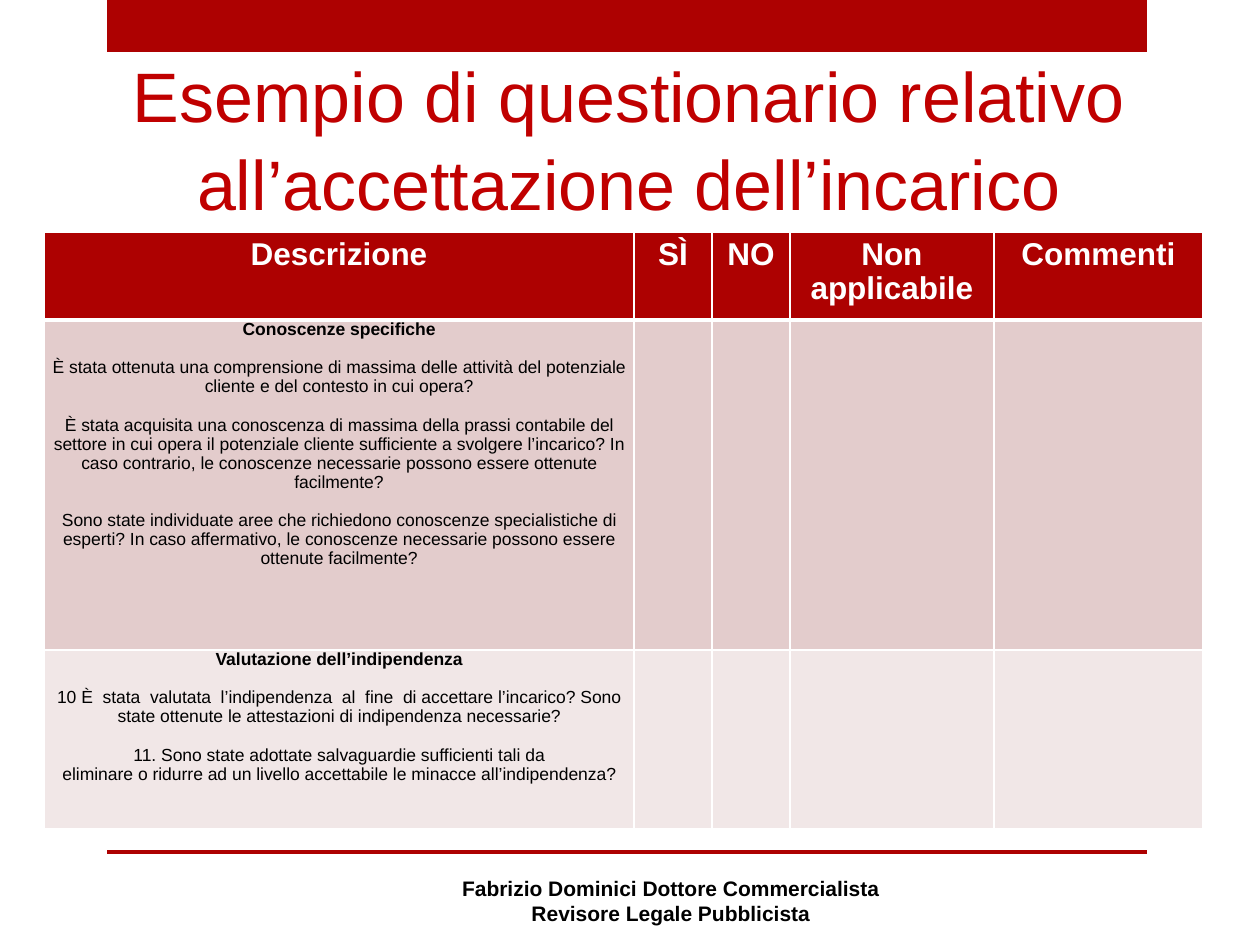
"""Build the slide with the questionnaire on accepting an engagement."""
from dataclasses import dataclass

from lxml.etree import SubElement
from pptx import Presentation
from pptx.dml.color import RGBColor
from pptx.enum.shapes import MSO_SHAPE
from pptx.enum.text import MSO_ANCHOR, PP_ALIGN
from pptx.oxml.ns import qn
from pptx.util import Pt

PX = 914400 // 126


@dataclass(frozen=True)
class Theme:
    font: str = "Arial"
    red: str = "AD0101"
    title_red: str = "C00000"
    white: str = "FFFFFF"
    black: str = "000000"
    bands: tuple = ("E3CCCC", "F1E7E7")
    title_size: int = 40
    header_size: int = 18
    footer_size: int = 12
    body_size: int = 10
    paragraph_gap: float = 11.2
    table_spacing: float = 0.97
    title_spacing: float = 1.05


THEME = Theme()
TITLE = "Esempio di questionario relativo all’accettazione dell’incarico"
FOOTER = ["Fabrizio Dominici Dottore Commercialista", "Revisore Legale Pubblicista"]
HEADERS = ["Descrizione", "SÌ", "NO", "Non applicabile", "Commenti"]
SECTIONS = [
    ("Conoscenze specifiche", [
        ["È stata ottenuta una comprensione di massima delle attività del potenziale "
         "cliente e del contesto in cui opera?"],
        ["È stata acquisita una conoscenza di massima della prassi contabile del settore "
         "in cui opera il potenziale cliente sufficiente a svolgere l’incarico? In caso "
         "contrario, le conoscenze necessarie possono essere ottenute facilmente?"],
        ["Sono state individuate aree che richiedono conoscenze specialistiche di "
         "esperti? In caso affermativo, le conoscenze necessarie possono essere",
         "ottenute facilmente?"],
    ]),
    ("Valutazione dell’indipendenza", [
        ["10 È  stata  valutata  l’indipendenza  al  fine  di accettare l’incarico? Sono "
         "state ottenute le attestazioni di indipendenza necessarie?"],
        ["11. Sono state adottate salvaguardie sufficienti tali da",
         "eliminare o ridurre ad un livello accettabile le minacce all’indipendenza?"],
    ]),
]
BARS = [(107, 0, 1040, 52), (107, 850, 1040, 4)]
TITLE_BOX = (94, 42, 1069, 189)
FOOTER_BOX = (431, 869, 480, 63)
TABLE_ORIGIN = (44, 232)
COLUMN_WIDTHS = [590, 78, 78, 204, 209]
ROW_HEIGHTS = [88, 330, 179]


def scaled(*lengths):
    return [length * PX for length in lengths]


def format_paragraph(paragraph, size, color, bold=False, spacing=None):
    paragraph.alignment = PP_ALIGN.CENTER
    paragraph.line_spacing = spacing
    for run in paragraph.runs:
        run.font.name = THEME.font
        run.font.size = Pt(size)
        run.font.bold = bold
        run.font.color.rgb = RGBColor.from_string(color)


def add_text(slide, box, lines, anchor, **style):
    text_frame = slide.shapes.add_textbox(*scaled(*box)).text_frame
    text_frame.word_wrap = True
    text_frame.vertical_anchor = anchor
    text_frame.text = "\n".join(lines)
    for paragraph in text_frame.paragraphs:
        format_paragraph(paragraph, **style)


def add_bar(slide, box):
    bar = slide.shapes.add_shape(MSO_SHAPE.RECTANGLE, *scaled(*box))
    bar.shadow.inherit = False
    bar.fill.solid()
    bar.fill.fore_color.rgb = RGBColor.from_string(THEME.red)
    bar.line.fill.background()


def style_cell(cell, fill, bottom_width=1):
    properties = cell._tc.get_or_add_tcPr()
    for side, width in (("L", 1), ("R", 1), ("T", 1), ("B", bottom_width)):
        line = SubElement(properties, qn(f"a:ln{side}"), w=str(Pt(width)))
        color = SubElement(SubElement(line, qn("a:solidFill")), qn("a:srgbClr"))
        color.set("val", THEME.white)
    cell.fill.solid()
    cell.fill.fore_color.rgb = RGBColor.from_string(fill)


def fill_section(cell, heading, questions):
    cell.margin_left = cell.margin_right = cell.margin_top = cell.margin_bottom = 0
    lines = [(heading, True, False)]
    for question in questions:
        lines += [(text, False, index == 0) for index, text in enumerate(question)]
    cell.text_frame.text = "\n".join(text for text, _, _ in lines)
    for paragraph, (_, bold, gap) in zip(cell.text_frame.paragraphs, lines):
        format_paragraph(paragraph, THEME.body_size, THEME.black, bold, THEME.table_spacing)
        paragraph.space_before = Pt(THEME.paragraph_gap if gap else 0)


def add_questionnaire(slide):
    size = sum(COLUMN_WIDTHS), sum(ROW_HEIGHTS)
    table = slide.shapes.add_table(
        len(ROW_HEIGHTS), len(COLUMN_WIDTHS), *scaled(*TABLE_ORIGIN, *size)).table
    table.horz_banding = False
    for column, width in zip(table.columns, COLUMN_WIDTHS):
        column.width = width * PX
    for row, height in zip(table.rows, ROW_HEIGHTS):
        row.height = height * PX
    for cell, header in zip(table.rows[0].cells, HEADERS):
        style_cell(cell, THEME.red, bottom_width=3)
        cell.text_frame.text = header
        format_paragraph(cell.text_frame.paragraphs[0], THEME.header_size, THEME.white,
                         True, THEME.table_spacing)
    for index, (section, band) in enumerate(zip(SECTIONS, THEME.bands), start=1):
        for cell in table.rows[index].cells:
            style_cell(cell, band)
        fill_section(table.cell(index, 0), *section)


def main():
    presentation = Presentation()
    presentation.slide_width, presentation.slide_height = scaled(1260, 945)
    slide = presentation.slides.add_slide(presentation.slide_layouts[6])
    for box in BARS:
        add_bar(slide, box)
    add_text(slide, TITLE_BOX, [TITLE], MSO_ANCHOR.BOTTOM, size=THEME.title_size,
             color=THEME.title_red, spacing=THEME.title_spacing)
    add_questionnaire(slide)
    add_text(slide, FOOTER_BOX, FOOTER, MSO_ANCHOR.MIDDLE, size=THEME.footer_size,
             color=THEME.black, bold=True)
    presentation.save("out.pptx")


if __name__ == "__main__":
    main()
